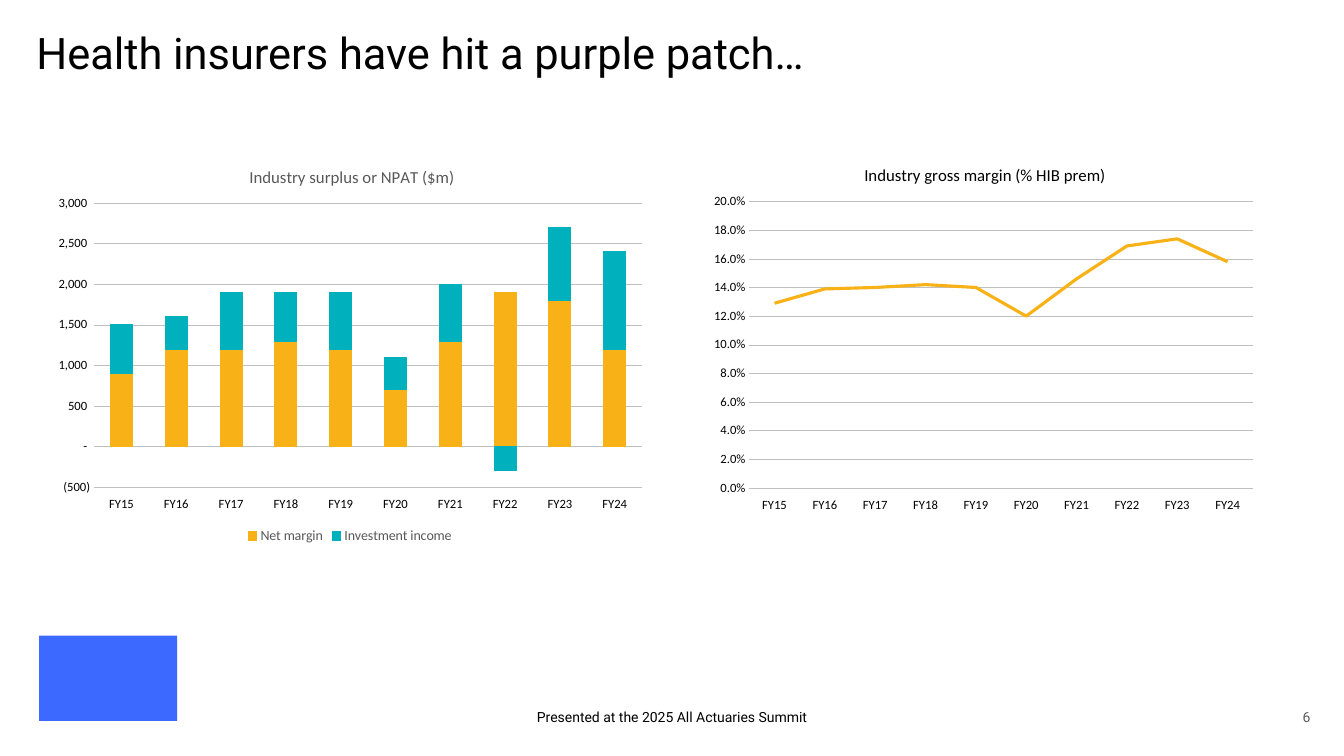
import pptx
import pptx.chart.data
import pptx.dml.color
import pptx.enum.chart
import pptx.enum.shapes
import pptx.enum.text
import pptx.oxml
import pptx.oxml.ns
import pptx.util

Pt = pptx.util.Pt
ALIGN = pptx.enum.text.PP_ALIGN
ANCHOR = pptx.enum.text.MSO_ANCHOR
CHART = pptx.enum.chart.XL_CHART_TYPE

AMBER, TEAL, BLUE = "F8B217", "00B0BD", "3C69FF"
BLACK, GREY, GRID = "000000", "595959", "BFBFBF"
YEARS = [f"FY{year}" for year in range(15, 25)]
NET_MARGIN = [900000, 1200000, 1200000, 1300000, 1200000,
              700000, 1300000, 1900000, 1800000, 1200000]
INVESTMENT_INCOME = [600000, 400000, 700000, 600000, 700000,
                     400000, 700000, -300000, 900000, 1200000]
GROSS_MARGIN = [0.129, 0.139, 0.14, 0.142, 0.14, 0.12, 0.146, 0.169, 0.174, 0.158]
THOUSANDS = r'_-* #,##0,_);\(#,##0,\);_-* "-"_);_-@_)'


def rgb(color):
    return pptx.dml.color.RGBColor.from_string(color)


def style_font(font, name, size, color):
    font.name = name
    font.size = Pt(size)
    font.bold = False
    font.color.rgb = rgb(color)


def write(frame, text, size, color, align, anchor):
    frame.word_wrap = True
    frame.vertical_anchor = anchor
    frame.margin_left = frame.margin_top = frame.margin_right = frame.margin_bottom = 0
    paragraph = frame.paragraphs[0]
    paragraph.alignment = align
    run = paragraph.add_run()
    run.text = text
    style_font(run.font, "Roboto", size, color)
    return paragraph


def add_heading(slide, text):
    heading = slide.shapes.title
    heading.left, heading.top, heading.width, heading.height = map(Pt, (26, 23, 747, 97))
    write(heading.text_frame, text, 31, BLACK, ALIGN.LEFT, ANCHOR.TOP).line_spacing = 0.9


def add_footer(slide, text, left, width, color, align):
    footer = slide.shapes.add_textbox(Pt(left), Pt(504), Pt(width), Pt(14.4))
    write(footer.text_frame, text, 10, color, align, ANCHOR.BOTTOM)


def add_emblem(slide):
    emblem = slide.shapes.add_shape(pptx.enum.shapes.MSO_SHAPE.RECTANGLE,
                                    Pt(28), Pt(454), Pt(98.6), Pt(61))
    emblem.shadow.inherit = False
    emblem.fill.solid()
    emblem.fill.fore_color.rgb = rgb(BLUE)
    emblem.line.fill.background()


def place(part, position, extra=""):
    """Fix a chart part at fractions of the chart's width and height."""
    for layout in part.findall(pptx.oxml.ns.qn("c:layout")):
        part.remove(layout)
    settings = extra + '<c:xMode val="edge"/><c:yMode val="edge"/>' + "".join(
        f'<c:{key} val="{value}"/>' for key, value in zip("xywh", position))
    layout = pptx.oxml.parse_xml(
        f'<c:layout {pptx.oxml.ns.nsdecls("c")}><c:manualLayout>{settings}'
        '</c:manualLayout></c:layout>')
    has_text = part.find(pptx.oxml.ns.qn("c:tx")) is not None
    part.insert(1 if has_text else 0, layout)


def style_axis(axis):
    tick = pptx.enum.chart.XL_TICK_MARK
    axis.major_tick_mark = axis.minor_tick_mark = tick.NONE
    axis.format.line.fill.background()
    style_font(axis.tick_labels.font, "Calibri", 9, BLACK)


def add_year_chart(slide, kind, box, title, title_color, title_at, plot_at,
                   series, scale, number_format):
    """Chart series of (name, values, colour, line width) over the years."""
    data = pptx.chart.data.CategoryChartData(number_format="General")
    data.categories = YEARS
    for name, values, _, _ in series:
        data.add_series(name, values)
    chart = slide.shapes.add_chart(kind, *map(Pt, box), data).chart
    style_font(chart.font, "Calibri", 10, BLACK)

    chart.has_title = True
    run = chart.chart_title.text_frame.paragraphs[0].add_run()
    run.text = title
    style_font(run.font, "Calibri", 12, title_color)
    place(chart.element.find(".//" + pptx.oxml.ns.qn("c:title")), title_at)
    place(chart.element.find(".//" + pptx.oxml.ns.qn("c:plotArea")), plot_at,
          '<c:layoutTarget val="inner"/>')

    style_axis(chart.category_axis)
    chart.category_axis.tick_label_position = pptx.enum.chart.XL_TICK_LABEL_POSITION.LOW
    amounts = chart.value_axis
    style_axis(amounts)
    amounts.minimum_scale, amounts.maximum_scale, amounts.major_unit = scale
    amounts.tick_labels.number_format = number_format
    amounts.tick_labels.number_format_is_linked = False
    amounts.has_major_gridlines = True
    amounts.major_gridlines.format.line.width = Pt(0.25)
    amounts.major_gridlines.format.line.color.rgb = rgb(GRID)

    chart.has_legend = len(series) > 1
    if chart.has_legend:
        chart.legend.position = pptx.enum.chart.XL_LEGEND_POSITION.BOTTOM
        chart.legend.include_in_layout = False
        style_font(chart.legend.font, "Calibri", 10, GREY)

    plot = chart.plots[0]
    plot.vary_by_categories = False
    for drawn, (_, _, color, line_width) in zip(plot.series, series):
        drawn.format.line.width = Pt(line_width)
        drawn.format.line.color.rgb = rgb(color)
        if kind == CHART.LINE:
            drawn.smooth = False
            drawn.marker.style = pptx.enum.chart.XL_MARKER_STYLE.NONE
        else:
            drawn.format.fill.solid()
            drawn.format.fill.fore_color.rgb = rgb(color)
            drawn.invert_if_negative = False
    return plot


def main():
    deck = pptx.Presentation()
    deck.slide_width, deck.slide_height = Pt(960), Pt(540)
    slide = deck.slides.add_slide(deck.slide_layouts[5])

    add_emblem(slide)
    add_heading(slide, "Health insurers have hit a purple patch…")
    add_footer(slide, "6", 903, 33, "5B5B5B", ALIGN.RIGHT)
    add_footer(slide, "Presented at the 2025 All Actuaries Summit", 318, 324,
               BLACK, ALIGN.CENTER)

    surplus = add_year_chart(
        slide, CHART.COLUMN_STACKED, (32.4, 101.5, 435, 290),
        "Industry surplus or NPAT ($m)", GREY, (0.33, 0.05), (0.08, 0.15, 0.9, 0.7),
        [("Net margin", NET_MARGIN, AMBER, 0.75),
         ("Investment income", INVESTMENT_INCOME, TEAL, 0.75)],
        (-500000, 3000000, 500000), THOUSANDS)
    surplus.gap_width, surplus.overlap = 150, 100

    add_year_chart(
        slide, CHART.LINE, (503.3, 101.5, 399.6, 265.7),
        "Industry gross margin (% HIB prem)", BLACK, (0.28, 0.05), (0.08, 0.16, 0.9, 0.77),
        [("Series 1", GROSS_MARGIN, AMBER, 2.25)],
        (0, 0.2, 0.02), "0.0%")

    deck.save("out.pptx")


if __name__ == "__main__":
    main()
